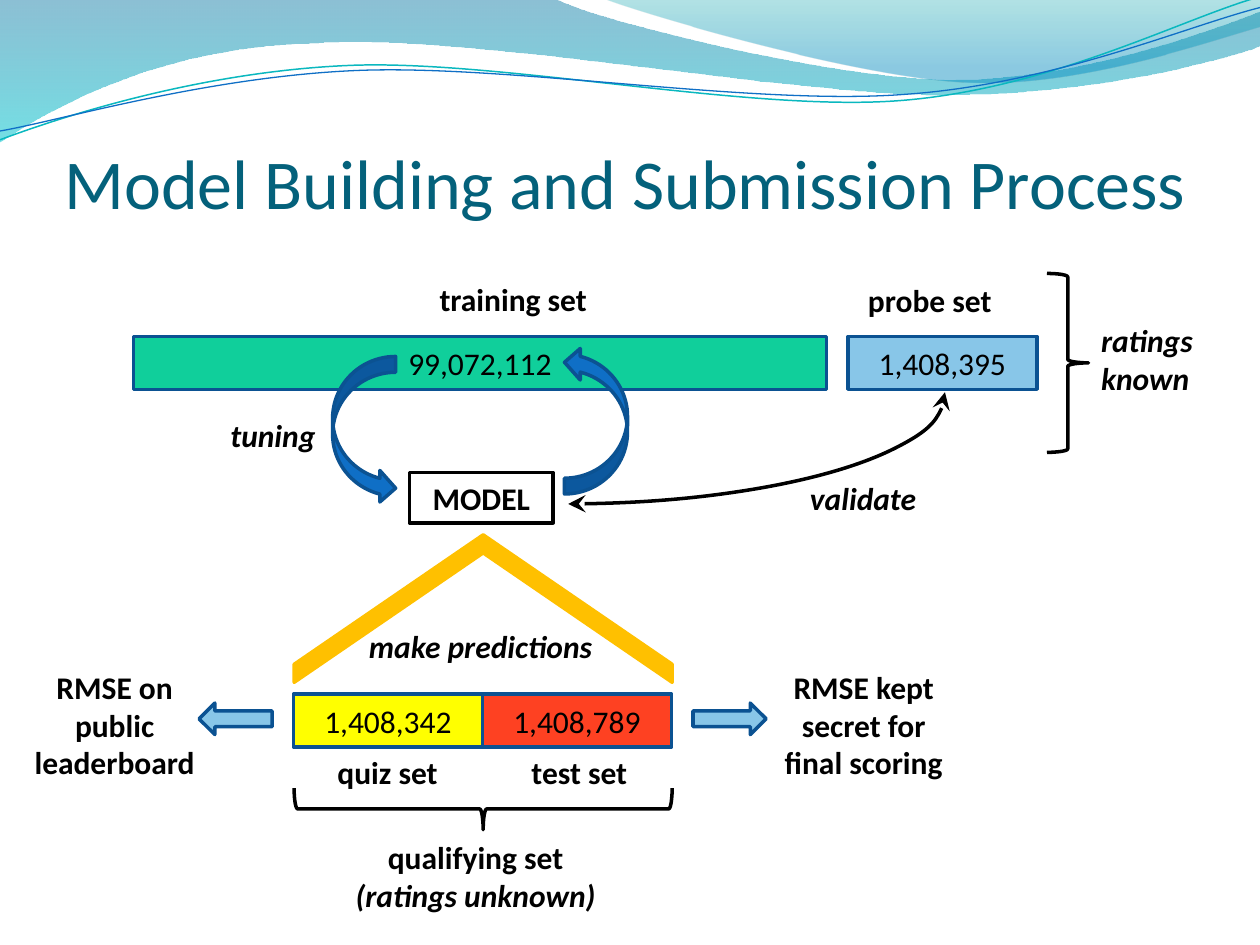
from lxml import etree
from pptx import Presentation
from pptx.dml.color import RGBColor
from pptx.enum import shapes, text
from pptx.oxml import ns
from pptx.util import Inches, Pt

KIND = shapes.MSO_SHAPE
BLACK, NAVY, BLUE, SKY, AMBER = "000000", "0B5292", "0F6FC6", "88C6E8", "FFC000"


def paint(shape, fill=None, line=None, width=2):
    shape.shadow.inherit = False
    if fill:
        shape.fill.solid()
        shape.fill.fore_color.rgb = RGBColor.from_string(fill)
    else:
        shape.fill.background()
    if line:
        shape.line.color.rgb = RGBColor.from_string(line)
        shape.line.width = Pt(width)
    else:
        shape.line.fill.background()


def write(shape, words, align="CENTER", size=18, color=BLACK, bold=False, italic_from=None):
    shape.text_frame.text = words
    for number, paragraph in enumerate(shape.text_frame.paragraphs):
        paragraph.alignment = text.PP_ALIGN[align]
        font = paragraph.runs[0].font
        font.name = "Calibri"
        font.size = Pt(size)
        font.bold = bold
        font.italic = italic_from is not None and number >= italic_from
        font.color.rgb = RGBColor.from_string(color)


presentation = Presentation()
presentation.slide_width = Inches(10)
presentation.slide_height = Inches(7.5)
slide = presentation.slides.add_slide(presentation.slide_layouts[6])

waves = [
    ([("0074A1", 45, 0), ("00C6CF", 55, 1)], None, 0, (0, 0), [
        (4.4, -0.01), (4.76, 0.17, 6.64, 0.63, 7.58, 0.63),
        (8.53, 0.63, 9.58, 0.26, 10, 0.09), (10.01, 0.36),
        (9.83, 0.44, 8.7, 0.76, 7.46, 0.75), (6.22, 0.75, 3.82, 0.28, 2.57, 0.34),
        (1.29, 0.36, 0.46, 0.83, -0.01, 1.13)]),
    ([("00A1A9", 30, 0), ("008BBF", 45, 0.8)], None, 0, (4.79, -0.01), [
        (5.09, 0.11, 6.82, 0.62, 7.69, 0.65), (8.56, 0.69, 9.61, 0.32, 10, 0.21),
        (10, 0)]),
    (None, "0AB8BF", 0.85, (0, 1.11), [
        (0.48, 0.93, 1.58, 0.57, 2.77, 0.52), (3.95, 0.47, 5.93, 0.89, 7.13, 0.8),
        (8.33, 0.71, 9.38, 0.15, 9.98, -0.02)]),
    (None, BLUE, 0.75, (0, 1.04), [
        (0.47, 0.96, 1.64, 0.61, 2.83, 0.56), (4.03, 0.51, 5.97, 0.84, 7.17, 0.75),
        (8.36, 0.67, 9.41, 0.21, 10, 0.06)]),
]
for stops, line, width, start, segments in waves:
    builder = slide.shapes.build_freeform(Inches(start[0]), Inches(start[1]), scale=1.0)
    ends = [(Inches(segment[-2]), Inches(segment[-1])) for segment in segments]
    builder.add_line_segments(ends, close=stops is not None)
    wave = builder.convert_to_shape()
    paint(wave, line=line, width=width)
    for node, segment in zip(list(wave.element.iter(ns.qn("a:lnTo"))), segments):
        if len(segment) == 6:
            node.tag = ns.qn("a:cubicBezTo")
            for index in (0, 1):
                control = etree.SubElement(node, ns.qn("a:pt"))
                control.set("x", str(Inches(segment[2 * index]) - wave.left))
                control.set("y", str(Inches(segment[2 * index + 1]) - wave.top))
                node.insert(index, control)
    if stops:
        wave.fill.gradient()
        wave.fill.gradient_angle = 270
        for stop, (color, opacity, position) in zip(wave.fill.gradient_stops, stops):
            stop.color.rgb = RGBColor.from_string(color)
            stop.position = position
        for node, (color, opacity, position) in zip(wave.element.iter(ns.qn("a:srgbClr")), stops):
            etree.SubElement(node, ns.qn("a:alpha")).set("val", str(opacity * 1000))

title = slide.shapes.add_textbox(Inches(0.42), Inches(0.92), Inches(9.08), Inches(0.85))
frame = title.text_frame
frame.word_wrap = True
frame.vertical_anchor = text.MSO_ANCHOR.BOTTOM
frame.margin_left = frame.margin_right = frame.margin_bottom = 0
write(title, "Model Building and Submission Process", size=40, color="04617B")

data_sets = [
    ("99,072,112", 1.06, 2.67, 5.5, "10CF9B"),
    ("1,408,395", 6.73, 2.67, 1.5, SKY),
    ("1,408,789", 3.83, 5.51, 1.5, "FE4122"),
    ("1,408,342", 2.33, 5.51, 1.5, "FFFF00"),
]
for count, left, top, width, fill in data_sets:
    bar = slide.shapes.add_shape(KIND.RECTANGLE, Inches(left), Inches(top), Inches(width), Inches(0.42))
    paint(bar, fill, NAVY)
    bar.text_frame.vertical_anchor = text.MSO_ANCHOR.MIDDLE
    write(bar, count)

symbols = [
    (KIND.LEFT_BRACE, 3.67, 4.92, 0.33, 3, 90, "flipH", None, BLACK, []),
    (KIND.CURVED_RIGHT_ARROW, 4.48, 2.75, 0.5, 1.17, 180, None, BLUE, NAVY, []),
    (KIND.CURVED_RIGHT_ARROW, 2.64, 2.83, 0.5, 1.17, 0, None, BLUE, NAVY, []),
    (KIND.RIGHT_BRACE, 8.31, 2.17, 0.33, 1.42, 0, None, None, BLACK, []),
    (KIND.ARC, 1.42, 2.25, 6.08, 1.75, 0, "flipV", None, BLACK, [163.946, 0.133]),
    (KIND.CHEVRON, 3.25, 3.33, 1.17, 3, 270, None, AMBER, AMBER, [0.878]),
    (KIND.RIGHT_ARROW, 5.5, 5.58, 0.58, 0.25, 0, None, SKY, NAVY, []),
    (KIND.RIGHT_ARROW, 1.58, 5.58, 0.58, 0.25, 180, None, SKY, NAVY, []),
]
for kind, left, top, width, height, rotation, flip, fill, line, adjustments in symbols:
    symbol = slide.shapes.add_shape(kind, Inches(left), Inches(top), Inches(width), Inches(height))
    paint(symbol, fill, line)
    symbol.rotation = rotation
    if flip:
        symbol.element.spPr.xfrm.set(flip, "1")
    for index, value in enumerate(adjustments):
        symbol.adjustments[index] = value
    if kind == KIND.ARC:
        outline = symbol.element.spPr.find(ns.qn("a:ln"))
        for end in ("a:headEnd", "a:tailEnd"):
            etree.SubElement(outline, ns.qn(end), type="stealth", w="lg", len="lg")

model = slide.shapes.add_shape(KIND.RECTANGLE, Inches(3.25), Inches(3.75), Inches(1.14), Inches(0.4))
paint(model, line=BLACK)
write(model, "MODEL", bold=True)

labels = [
    ("training set", 3.39, 2.17, 1.38, 0.4, "LEFT", None),
    ("quiz set", 2.58, 5.93, 1, 0.4, "LEFT", None),
    ("test set", 4.12, 5.93, 0.97, 0.4, "LEFT", None),
    ("qualifying set\n(ratings unknown)", 2.72, 6.6, 2.11, 0.71, "CENTER", 1),
    ("probe set", 6.79, 2.18, 1.19, 0.4, "LEFT", None),
    ("tuning", 1.73, 3.25, 0.88, 0.4, "LEFT", 0),
    ("ratings\nknown", 8.64, 2.5, 0.94, 0.71, "LEFT", 0),
    ("validate", 6.33, 3.75, 1.05, 0.4, "LEFT", 0),
    ("make predictions", 2.83, 4.93, 2, 0.4, "LEFT", 0),
    ("RMSE on\npublic\nleaderboard", 0.17, 5.25, 1.48, 1.01, "CENTER", None),
    ("RMSE kept\nsecret for\nfinal scoring", 6.12, 5.25, 1.47, 1.01, "CENTER", None),
]
for words, left, top, width, height, align, italic_from in labels:
    label = slide.shapes.add_textbox(Inches(left), Inches(top), Inches(width), Inches(height))
    label.text_frame.word_wrap = False
    label.text_frame.auto_size = text.MSO_AUTO_SIZE.SHAPE_TO_FIT_TEXT
    write(label, words, align, bold=True, italic_from=italic_from)

presentation.save("out.pptx")
